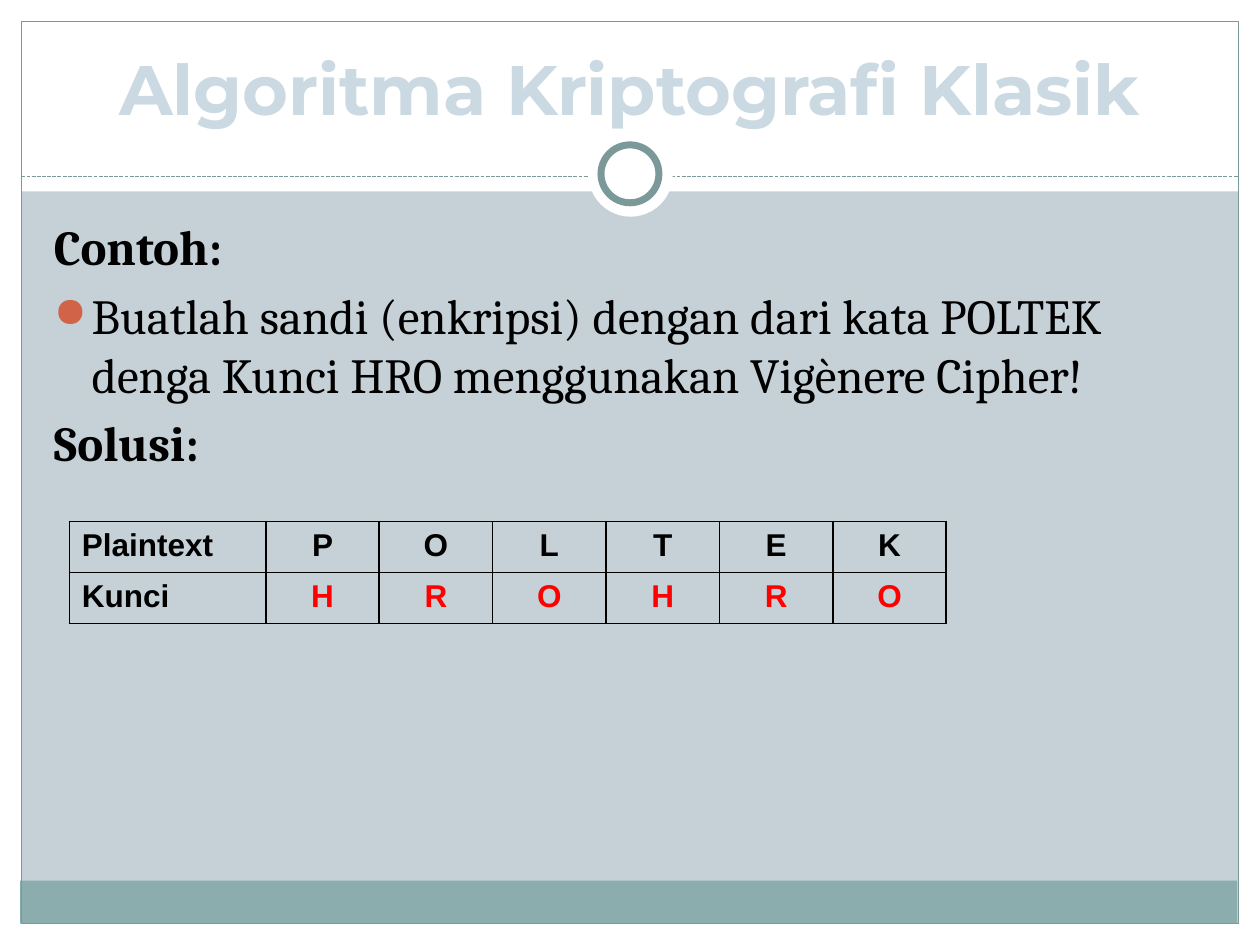
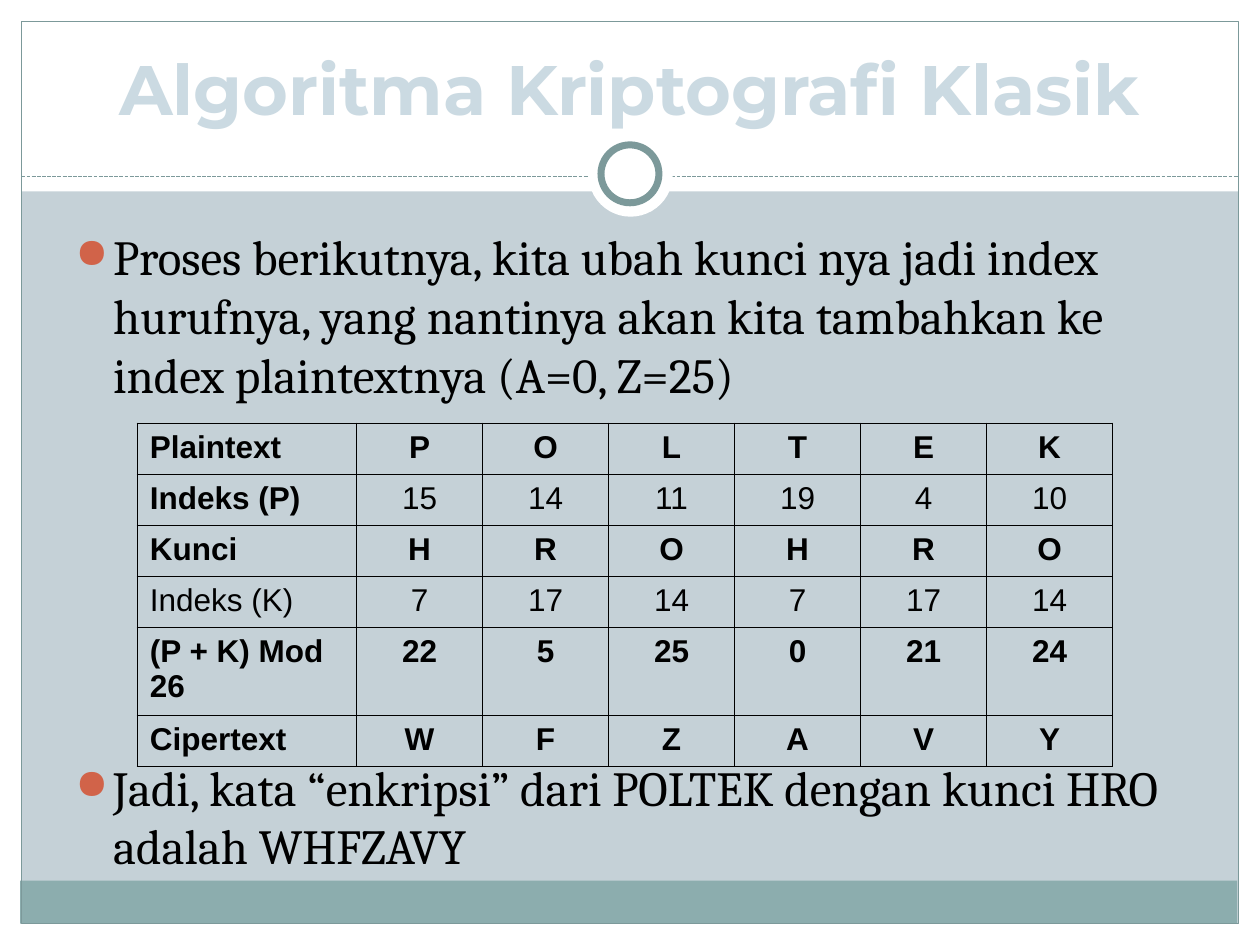
from lxml.etree import SubElement
from pptx import Presentation
from pptx.dml.color import RGBColor
from pptx.enum.dml import MSO_LINE
from pptx.enum.shapes import MSO_CONNECTOR, MSO_SHAPE
from pptx.enum.text import MSO_ANCHOR, PP_ALIGN
from pptx.oxml import parse_xml
from pptx.oxml.ns import nsdecls, qn
from pptx.util import Inches, Pt

BACKGROUND = RGBColor(0xC5, 0xD1, 0xD7)
WHITE = RGBColor(0xFF, 0xFF, 0xFF)
BLACK = RGBColor(0x00, 0x00, 0x00)
RED = RGBColor(0xFF, 0x00, 0x00)
BAND = RGBColor(0x8C, 0xAD, 0xAE)
RULE = RGBColor(0x7C, 0x99, 0x9A)
TITLE = RGBColor(0xCB, 0xDA, 0xE2)
BULLET = RGBColor(0xD1, 0x63, 0x49)


class Deck:
    title_font, body_font, table_font = "Montserrat", "Cambria", "Arial"
    title_size, body_size, table_size = Pt(40), Pt(28), Pt(18)
    row_height = 0.405

    def __init__(self):
        self.prs = Presentation()
        self.prs.slide_width, self.prs.slide_height = Inches(10), Inches(7.5)
        self.s = None

    def slide(self, title):
        self.s = self.prs.slides.add_slide(self.prs.slide_layouts[6])
        fill = self.s.background.fill
        fill.solid()
        fill.fore_color.rgb = BACKGROUND
        for box in ((0, 7.33, 10, 0.17), (0, 0, 10, 1.52),
                    (0, 0, 0.17, 7.5), (9.83, 0, 0.17, 7.5)):
            self.shape(box, WHITE)
        self.shape((0.16, 6.99, 9.66, 0.34), BAND)
        self.shape((0.17, 0.17, 9.66, 7.16), line=0.75)
        self.dashed_line(0.17, 9.83, 1.4)
        self.shape((4.67, 1.05, 0.67, 0.67), WHITE, kind=MSO_SHAPE.OVAL)
        self.shape((4.77, 1.15, 0.46, 0.46), WHITE, 4, MSO_SHAPE.OVAL)
        tf = self.text_frame((0.33, 0.25, 9.33, 0.83), MSO_ANCHOR.BOTTOM)
        p = tf.paragraphs[0]
        p.alignment = PP_ALIGN.CENTER
        self.run(p, title, self.title_font, self.title_size, TITLE, True)

    def shape(self, box, fill=None, line=None, kind=MSO_SHAPE.RECTANGLE):
        sp = self.s.shapes.add_shape(kind, *map(Inches, box))
        sp.shadow.inherit = False
        if fill is None:
            sp.fill.background()
        else:
            sp.fill.solid()
            sp.fill.fore_color.rgb = fill
        if line is None:
            sp.line.fill.background()
        else:
            sp.line.color.rgb = RULE
            sp.line.width = Pt(line)

    def dashed_line(self, left, right, y):
        c = self.s.shapes.add_connector(
            MSO_CONNECTOR.STRAIGHT, Inches(left), Inches(y), Inches(right), Inches(y))
        c.line.color.rgb = RULE
        c.line.width = Pt(0.75)
        c.line.dash_style = MSO_LINE.SQUARE_DOT
        SubElement(c._element.spPr, qn("a:effectLst"))

    def text_frame(self, box, anchor=MSO_ANCHOR.TOP):
        tf = self.s.shapes.add_textbox(*map(Inches, box)).text_frame
        tf.word_wrap = True
        tf.vertical_anchor = anchor
        return tf

    def run(self, p, text, font, size, color=BLACK, bold=False):
        r = p.add_run()
        r.text = text
        r.font.name, r.font.size, r.font.bold = font, size, bold
        r.font.color.rgb = color

    def body(self, box, *items):
        tf = self.text_frame(box)
        for i, (text, bulleted) in enumerate(items):
            p = tf.add_paragraph() if i else tf.paragraphs[0]
            p.space_before = Pt(5.6)
            pPr = p._p.get_or_add_pPr()
            pPr.set("marL", str(Inches(0.3)))
            pPr.set("indent", str(-Inches(0.3)))
            if bulleted:
                color = SubElement(pPr, qn("a:buClr"))
                SubElement(color, qn("a:srgbClr"), val=str(BULLET))
                SubElement(pPr, qn("a:buSzPct"), val="85000")
                SubElement(pPr, qn("a:buChar"), char="●")
            self.run(p, text, self.body_font, self.body_size, bold=not bulleted)

    def table(self, left, top, label_width, letter_width, rows):
        count = len(rows[0][1])
        width = label_width + count * letter_width
        table = self.s.shapes.add_table(
            len(rows), count + 1, Inches(left), Inches(top),
            Inches(width), Inches(self.row_height * len(rows))).table
        table.first_row = table.horz_banding = False
        for i, column in enumerate(table.columns):
            column.width = Inches(letter_width if i else label_width)
        for i, (label, values, label_bold, bold, color) in enumerate(rows):
            for j, text in enumerate([label, *values]):
                cell = table.cell(i, j)
                cell.fill.background()
                self.borders(cell)
                p = cell.text_frame.paragraphs[0]
                p.alignment = PP_ALIGN.CENTER if j else PP_ALIGN.LEFT
                self.run(p, text, self.table_font, self.table_size,
                         color if j else BLACK, bold if j else label_bold)

    def borders(self, cell):
        tcPr = cell._tc.get_or_add_tcPr()
        for i, side in enumerate("LRTB"):
            tcPr.insert(i, parse_xml(
                f'<a:ln{side} {nsdecls("a")} w="{Pt(1)}"><a:solidFill>'
                f'<a:srgbClr val="{BLACK}"/></a:solidFill></a:ln{side}>'))


def main():
    title = "Algoritma Kriptografi Klasik"
    plaintext = ("Plaintext", "POLTEK", True, True, BLACK)
    deck = Deck()

    deck.slide(title)
    deck.body((0.33, 1.67, 9.3, 5),
              ("Contoh:", False),
              ("Buatlah sandi (enkripsi) dengan dari kata POLTEK denga Kunci HRO "
               "menggunakan Vigènere Cipher!", True),
              ("Solusi:", False))
    deck.table(0.55, 4.14, 1.56, 0.9, [
        plaintext,
        ("Kunci", "HROHRO", True, True, RED),
    ])

    deck.slide(title)
    deck.body((0.5, 1.75, 9, 1.6),
              ("Proses berikutnya, kita ubah kunci nya jadi index hurufnya, yang "
               "nantinya akan kita tambahkan ke index plaintextnya (A=0, Z=25)", True))
    deck.body((0.5, 5.96, 9, 1.05),
              ("Jadi, kata “enkripsi” dari POLTEK dengan kunci HRO adalah WHFZAVY", True))
    deck.table(1.09, 3.36, 1.74, 1, [
        plaintext,
        ("Indeks (P)", ["15", "14", "11", "19", "4", "10"], True, False, BLACK),
        ("Kunci", "HROHRO", True, True, BLACK),
        ("Indeks (K)", ["7", "17", "14", "7", "17", "14"], False, False, BLACK),
        ("(P + K) Mod 26", ["22", "5", "25", "0", "21", "24"], True, True, BLACK),
        ("Cipertext", "WFZAVY", True, True, BLACK),
    ])

    deck.prs.save("out.pptx")


if __name__ == "__main__":
    main()
